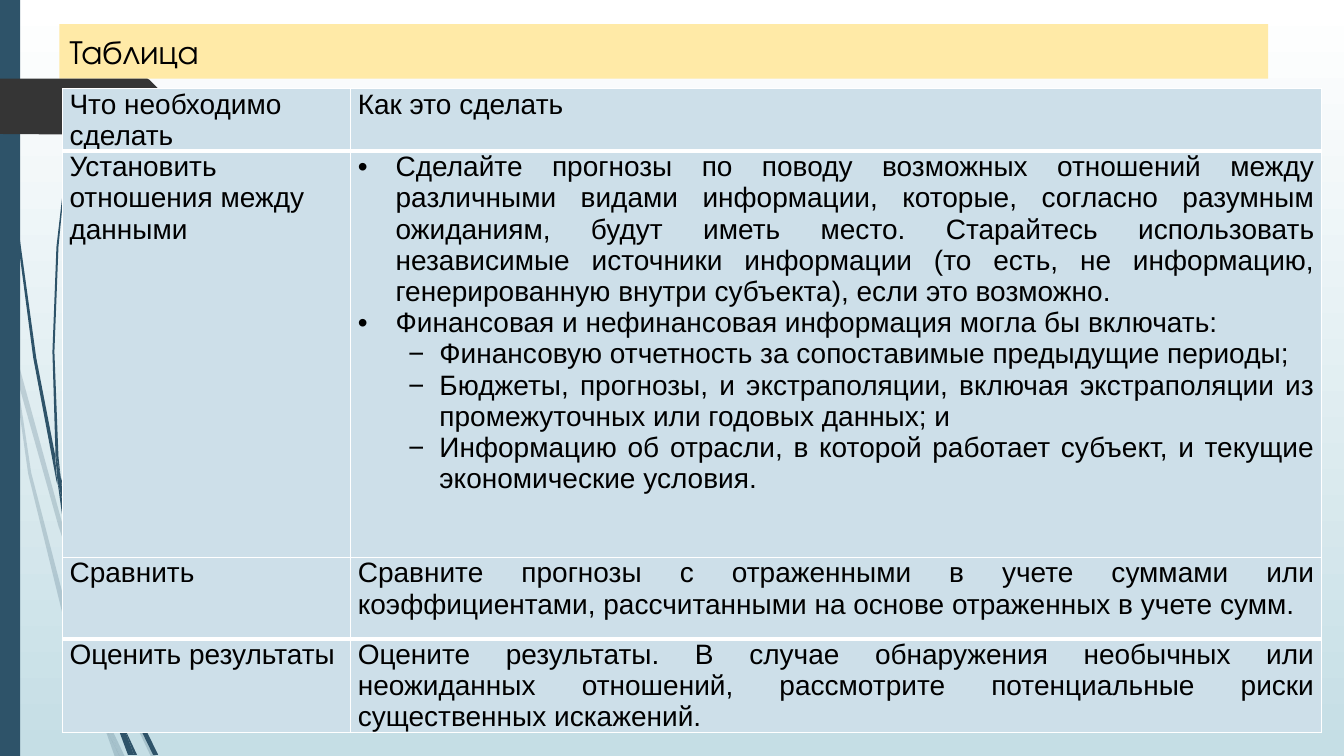
from lxml import etree
from pptx import Presentation
from pptx.dml.color import RGBColor
from pptx.enum.shapes import MSO_SHAPE
from pptx.enum.text import MSO_ANCHOR, MSO_AUTO_SIZE, PP_ALIGN
from pptx.oxml.ns import qn
from pptx.util import Inches, Pt

RECT = MSO_SHAPE.RECTANGLE
MIDDLE = MSO_ANCHOR.MIDDLE
TOP = MSO_ANCHOR.TOP
FIXED = MSO_AUTO_SIZE.NONE
LEFT = PP_ALIGN.LEFT
JUST = PP_ALIGN.JUSTIFY

COLORS = {"navy": "2E5369", "dark": "353535", "sand": "FFEAA7", "cell": "CDDFE9",
          "black": "000000", "white": "FFFFFF", "mist": "C5DEE5"}
CELL = Inches(0.1)
STEPS = 10
COLS, ROWS = 133.33, 75

PALE = [
    [(11, 350), (9, 322), (0, 282), (0, 299), (10, 344)],
    [(58, 522), (84, 599), (85, 586), (62, 520), (14, 345), (17, 376)],
    [(92, 607), (88, 596), (88, 610), (123, 694), (150, 751), (155, 751), (127, 692)],
    [(119, 751), (124, 751), (105, 711)],
    [(93, 683), (70, 619), (31, 469), (17, 376), (11, 350), (28, 470), (65, 621),
     (92, 693), (101, 714), (99, 707)],
    [(84, 599), (87, 646), (93, 683), (96, 692), (105, 711), (103, 706), (91, 646),
     (88, 610), (88, 608)],
    [(88, 584), (110, 462), (160, 349), (229, 245), (268, 198), (290, 175), (312, 154),
     (312, 153), (289, 175), (268, 197), (228, 244), (158, 348), (107, 461), (85, 584),
     (85, 586), (88, 596)],
    [(101, 714), (114, 751), (119, 751)],
    [(88, 608), (88, 610), (88, 596), (85, 586), (84, 599)],
    [(96, 692), (93, 683), (99, 707), (101, 714), (119, 751), (105, 711)],
]
DEEP = [
    [(7, 110), (17, 233), (33, 355), (56, 477), (57, 481), (55, 457), (55, 453),
     (36, 355), (19, 232), (8, 109), (5, 48), (4, 0), (3, 0), (4, 48)],
    [(88, 592), (106, 645), (106, 633), (106, 631), (93, 590), (60, 472), (64, 505)],
    [(113, 649), (110, 641), (111, 656), (132, 708), (152, 749), (157, 749), (136, 706)],
    [(110, 691), (98, 657), (72, 556), (64, 505), (57, 477), (68, 557), (93, 659),
     (111, 708), (117, 722), (116, 717)],
    [(60, 472), (58, 453), (54, 349), (58, 245), (63, 193), (70, 141), (62, 193),
     (56, 245), (52, 349), (55, 449)],
    [(133, 749), (136, 749), (122, 719)],
    [(57, 477), (64, 505), (60, 472), (55, 449), (55, 453)],
    [(111, 633), (125, 552), (158, 476), (205, 406), (231, 374), (245, 359), (261, 344),
     (260, 344), (245, 358), (231, 373), (204, 405), (156, 474), (122, 551), (106, 631),
     (110, 641)],
    [(117, 722), (127, 749), (131, 749)],
    [(106, 645), (110, 691), (116, 706), (122, 719), (121, 716), (111, 656), (109, 651)],
    [(106, 645), (109, 651), (111, 656), (110, 641), (106, 631), (106, 633)],
    [(116, 706), (110, 691), (116, 717), (117, 722), (130, 749), (133, 749), (122, 719)],
]
ARROW = [(0, 78), (146, 78), (148, 79), (173, 104), (173, 108), (148, 133), (146, 134),
         (0, 133)]

DOT = {"bullet": "•", "margin": 3.75, "hang": 3.75}
DASH = {"bullet": "−", "margin": 8.1, "hang": 3.1, "level": 1}
TASKS = [
    ("Что необходимо сделать", [("Как это сделать", {"align": LEFT})]),
    ("Установить отношения между данными", [
        ("Сделайте прогнозы по поводу возможных отношений между различными видами "
         "информации, которые, согласно разумным ожиданиям, будут иметь место. "
         "Старайтесь использовать независимые источники информации (то есть, не "
         "информацию, генерированную внутри субъекта), если это возможно.", DOT),
        ("Финансовая и нефинансовая информация могла бы включать:", DOT),
        ("Финансовую отчетность за сопоставимые предыдущие периоды;", DASH),
        ("Бюджеты, прогнозы, и экстраполяции, включая экстраполяции из "
         "промежуточных или годовых данных; и", DASH),
        ("Информацию об отрасли, в которой работает субъект, и текущие "
         "экономические условия.", DASH)]),
    ("Сравнить", [
        ("Сравните прогнозы с отраженными в учете суммами или коэффициентами, "
         "рассчитанными на основе отраженных в учете сумм.", {})]),
    ("Оценить результаты", [
        ("Оцените результаты. В случае обнаружения необычных или неожиданных "
         "отношений, рассмотрите потенциальные риски существенных искажений.", {})]),
]
WIDTHS = [28.6, 96.3]
HEIGHTS = [5.4, 40.3, 8.1, 8.1]
THICK = {(0, "B"), (1, "T"), (2, "B"), (3, "T")}


def tint(name):
    return RGBColor.from_string(COLORS[name])


def grid(*units):
    return [round(unit * CELL) for unit in units]


def write(par, text, size=20, font="Arial", color="black", align=LEFT,
          bullet=None, margin=0, hang=0, level=0):
    par.alignment = align
    par.level = level
    if bullet:
        props = par._p.get_or_add_pPr()
        left, dent = grid(margin, -hang)
        props.set("marL", str(left))
        props.set("indent", str(dent))
        etree.SubElement(props, qn("a:buFont"), typeface="Arial")
        etree.SubElement(props, qn("a:buChar"), char=bullet)
    run = par.add_run()
    run.text = text
    run.font.size = Pt(size)
    run.font.name = font
    run.font.color.rgb = tint(color)


class Deck:
    """Holds the style and the current slide, with a method for each kind of element."""

    def __init__(self):
        self.file = Presentation()
        self.file.slide_width, self.file.slide_height = grid(COLS, ROWS)
        self.slide = self.file.slides.add_slide(self.file.slide_layouts[5])

    def back(self, top, base):
        fill = self.slide.background.fill
        fill.gradient()
        fill.gradient_angle = 270
        for stop, name, place in zip(fill.gradient_stops, (top, base), (0, 1)):
            stop.color.rgb = tint(name)
            stop.position = place

    def paint(self, shape, color, alpha=None):
        shape.shadow.inherit = False
        shape.line.fill.background()
        shape.fill.solid()
        shape.fill.fore_color.rgb = tint(color)
        if alpha:
            hue = shape._element.spPr.find(".//" + qn("a:srgbClr"))
            etree.SubElement(hue, qn("a:alpha"), val=str(alpha * 1000))

    def block(self, box, color):
        self.paint(self.slide.shapes.add_shape(RECT, *grid(*box)), color)

    def wisp(self, knots, color, alpha=None):
        pen = self.slide.shapes.build_freeform(*knots[0], scale=CELL / STEPS)
        pen.add_line_segments(knots[1:], close=True)
        self.paint(pen.convert_to_shape(), color, alpha)

    def title(self, text, box, color):
        head = self.slide.shapes.title
        head.left, head.top, head.width, head.height = grid(*box)
        head.fill.solid()
        head.fill.fore_color.rgb = tint(color)
        frame = head.text_frame
        frame.auto_size = FIXED
        frame.word_wrap = True
        frame.vertical_anchor = MIDDLE
        write(frame.paragraphs[0], text, size=24, font="TeX Gyre Adventor")

    def edge(self, cell, row):
        props = cell._tc.get_or_add_tcPr()
        for spot, side in enumerate("LRTB"):
            width = Pt(3 if (row, side) in THICK else 1)
            line = etree.Element(qn("a:ln" + side), w=str(width))
            fill = etree.SubElement(line, qn("a:solidFill"))
            etree.SubElement(fill, qn("a:srgbClr"), val=COLORS["white"])
            props.insert(spot, line)

    def fill(self, cell, items, row):
        cell.fill.solid()
        cell.fill.fore_color.rgb = tint("cell")
        cell.margin_left, cell.margin_right = grid(0.7, 0.7)
        cell.margin_top = cell.margin_bottom = 0
        cell.vertical_anchor = TOP
        frame = cell.text_frame
        for spot, (text, style) in enumerate(items):
            par = frame.add_paragraph() if spot else frame.paragraphs[0]
            write(par, text, **style)
        self.edge(cell, row)

    def table(self, tasks, left, top):
        box = grid(left, top, sum(WIDTHS), sum(HEIGHTS))
        table = self.slide.shapes.add_table(len(tasks), len(WIDTHS), *box).table
        table.first_row = table.horz_banding = False
        for col, width in zip(table.columns, grid(*WIDTHS)):
            col.width = width
        for line, height in zip(table.rows, grid(*HEIGHTS)):
            line.height = height
        for row, (task, steps) in enumerate(tasks):
            self.fill(table.cell(row, 0), [(task, {})], row)
            steps = [(text, {"align": JUST, **style}) for text, style in steps]
            self.fill(table.cell(row, 1), steps, row)


def main():
    deck = Deck()
    deck.back("white", "mist")
    for knots in PALE:
        deck.wisp(knots, "navy", alpha=20)
    for knots in DEEP:
        deck.wisp(knots, "navy")
    deck.block((0, 0, 2, ROWS), "navy")
    deck.wisp(ARROW, "dark")
    deck.title("Таблица", (5.9, 2.4, 119.9, 5.4), "sand")
    deck.table(TASKS, 6.2, 8.8)
    deck.file.save("out.pptx")


if __name__ == "__main__":
    main()
